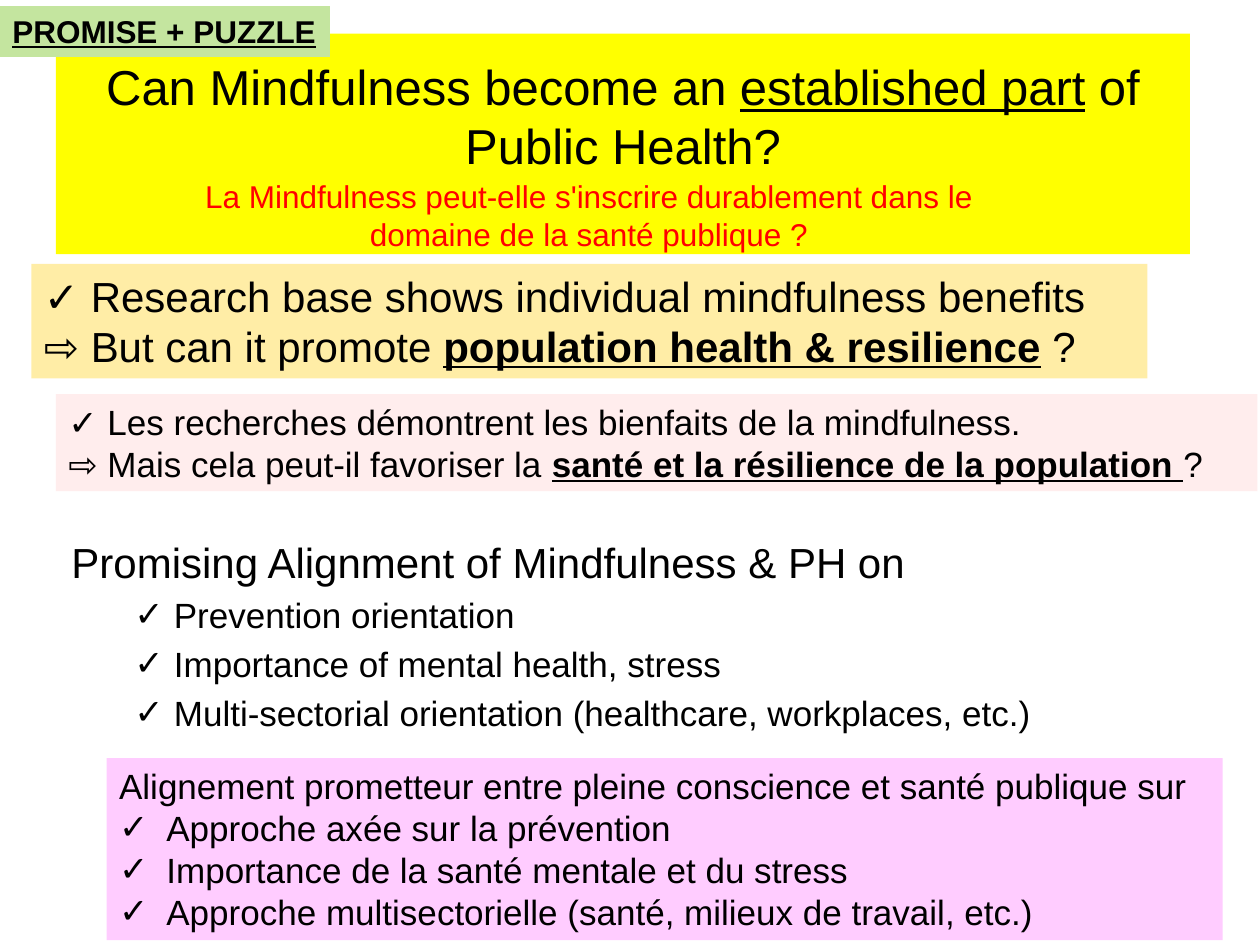
from dataclasses import dataclass
from typing import Optional

from lxml.etree import SubElement
from pptx import Presentation
from pptx.dml.color import RGBColor
from pptx.enum.shapes import MSO_SHAPE as Shp
from pptx.enum.text import MSO_ANCHOR as Anchor, PP_ALIGN as Align
from pptx.oxml.ns import qn
from pptx.util import Pt

PLAIN = {}
UNDERLINE = {"underline": True}
STRONG = {"bold": True, "underline": True}


@dataclass
class Para:
    runs: list
    bullet: Optional[tuple] = None  # (left margin, hanging indent)
    before: float = 0


@dataclass
class Box:
    at: tuple
    paras: list
    size: float
    fill: Optional[str] = None
    alpha: int = 100
    color: str = "000000"
    align: Align = Align.LEFT
    top: float = 3.6
    wrap: bool = True


def rgb(value: str) -> RGBColor:
    return RGBColor.from_string(value)


def line(text: str, **options) -> Para:
    return Para([(text, PLAIN)], **options)


def set_bullet(p, margin: float, hang: float) -> None:
    pPr = p._p.get_or_add_pPr()
    pPr.set("marL", str(Pt(margin)))
    pPr.set("indent", str(-Pt(hang)))
    SubElement(pPr, qn("a:buFont")).set("typeface", "Arial")
    SubElement(pPr, qn("a:buChar")).set("char", "✓")


def write_para(p, para: Para, box: Box, size: float) -> None:
    p.alignment = box.align
    if para.before:
        p.space_before = Pt(para.before)
    if para.bullet:
        set_bullet(p, *para.bullet)
    for text, style in para.runs:
        r = p.add_run()
        r.text = text
        for name, value in {"name": "Arial", "size": Pt(size), **style}.items():
            setattr(r.font, name, value)
        r.font.color.rgb = rgb(box.color)


def draw_box(s, box: Box) -> None:
    at = [Pt(v) for v in box.at]
    if box.fill:
        sp = s.shapes.add_shape(Shp.RECTANGLE, *at)
        sp.shadow.inherit = False
        sp.line.fill.background()
        sp.fill.solid()
        sp.fill.fore_color.rgb = rgb(box.fill)
        if box.alpha < 100:
            clr = sp.fill._xPr.find(".//" + qn("a:srgbClr"))
            SubElement(clr, qn("a:alpha")).set("val", str(box.alpha * 1000))
    else:
        sp = s.shapes.add_textbox(*at)
    tf = sp.text_frame
    frame = {"word_wrap": box.wrap, "vertical_anchor": Anchor.TOP,
             "margin_left": Pt(7.2), "margin_right": Pt(7.2),
             "margin_top": Pt(box.top), "margin_bottom": Pt(3.6)}
    for name, value in frame.items():
        setattr(tf, name, value)
    for i, para in enumerate(box.paras):
        p = tf.add_paragraph() if i else tf.paragraphs[0]
        # Indented sub-items are set smaller than their heading
        write_para(p, para, box, 20 if para.bullet else box.size)


SUB = {"bullet": (58.5, 22.5), "before": 4}
ITEM = {"bullet": (27, 27)}

BOXES = [
    Box((33.75, 303, 605.5, 125.5), [
        line("Promising Alignment of Mindfulness & PH on"),
        line("Prevention orientation", **SUB),
        line("Importance of mental health, stress", **SUB),
        line("Multi-sectorial orientation (healthcare, workplaces, etc.)", **SUB),
    ], 24),
    Box((32, 19.25, 648, 126), [
        Para([("Can Mindfulness become an ", PLAIN),
              ("established part", UNDERLINE),
              (" of Public Health?", PLAIN)]),
    ], 28, "FFFF00", align=Align.CENTER, top=13),
    Box((18, 150.75, 637.75, 65.5), [
        line("✓ Research base shows individual mindfulness benefits"),
        Para([("⇨ But can it promote ", PLAIN),
              ("population health & resilience", STRONG), (" ?", PLAIN)]),
    ], 24, "FFCC00", 35),
    Box((32, 225.25, 686.5, 55.5), [
        line("✓ Les recherches démontrent les bienfaits de la mindfulness."),
        Para([("⇨ Mais cela peut-il favoriser la ", PLAIN),
              ("santé et la résilience de la population ", STRONG), ("?", PLAIN)]),
    ], 20, "FFCCCC", 35),
    Box((61, 433.25, 637.75, 104), [
        line("Alignement prometteur entre pleine conscience et santé publique sur"),
        line("Approche axée sur la prévention", **ITEM),
        line("Importance de la santé mentale et du stress", **ITEM),
        line("Approche multisectorielle (santé, milieux de travail, etc.)", **ITEM),
    ], 20, "FFCCFF"),
    Box((78.5, 97.5, 516, 51), [
        line("La Mindfulness peut-elle s'inscrire durablement dans le "
             "domaine de la santé publique ?"),
    ], 18, color="FF0000", align=Align.CENTER),
    Box((0, 3.5, 188.5, 29), [Para([("PROMISE + PUZZLE", STRONG)])],
        18, "C4E59F", wrap=False),
]


def main() -> None:
    prs = Presentation()
    prs.slide_width, prs.slide_height = Pt(720), Pt(540)
    s = prs.slides.add_slide(prs.slide_layouts[6])
    for box in BOXES:
        draw_box(s, box)
    prs.save("out.pptx")


if __name__ == "__main__":
    main()
